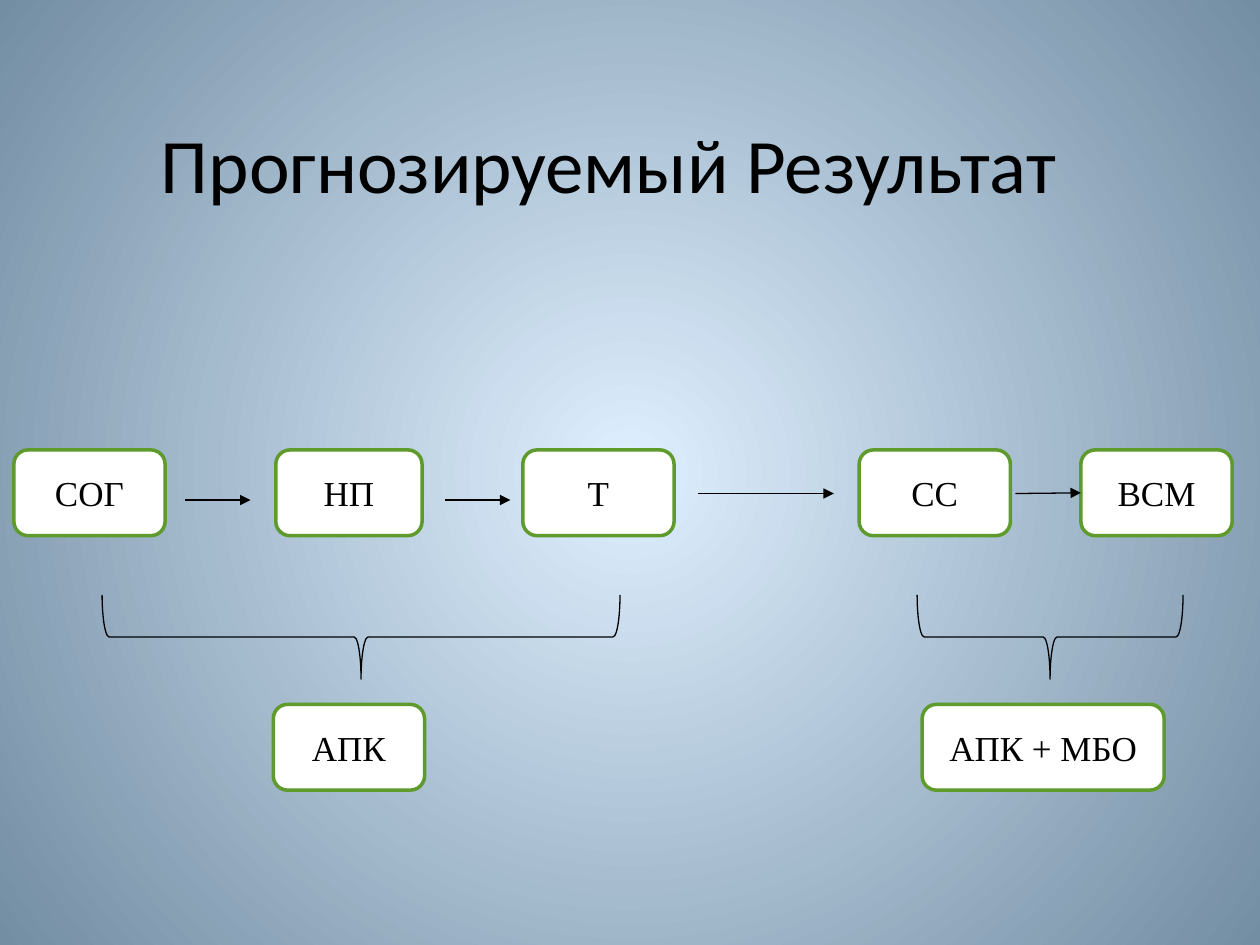
from lxml import etree
from pptx import Presentation
from pptx.dml.color import RGBColor
from pptx.enum.shapes import MSO_CONNECTOR, MSO_SHAPE
from pptx.enum.text import MSO_ANCHOR, PP_ALIGN
from pptx.oxml.ns import qn
from pptx.util import Cm, Pt

ROUND = MSO_SHAPE.ROUNDED_RECTANGLE
BRACE = MSO_SHAPE.LEFT_BRACE
LINE = MSO_CONNECTOR.STRAIGHT
MIDDLE = MSO_ANCHOR.MIDDLE
CENTER = PP_ALIGN.CENTER
LEFT_SIDE = 1

COLORS = {"center": "DFF0FF", "edge": "738DA3", "box": "FFFFFF",
          "border": "5E9B2C", "ink": "000000"}

STEP_TOP, GROUP_TOP, BRACE_MID = 9.07, 14.2, 12.84
BOX_W, BOX_H, BRACE_H = 3.05, 1.73, 1.7

# Label, left, width
STEPS = [("СОГ", 0.28, BOX_W), ("НП", 5.56, 2.95), ("Т", 10.54, BOX_W),
         ("СС", 17.32, BOX_W), ("ВСМ", 21.79, BOX_W)]
GROUPS = [("АПК", 5.51, BOX_W), ("АПК + МБО", 18.59, 4.88)]
# Start, end, height on the slide
ARROWS = [(3.73, 5.05, 10.08), (8.97, 10.29, 10.08),
          (14.07, 16.81, 9.95), (20.47, 21.79, 9.95)]
# Center, span
BRACES = [(7.28, 10.44), (21.17, 5.36)]


def rgb(name):
    return RGBColor.from_string(COLORS[name])


def set_text(shape, text, font, size):
    frame = shape.text_frame
    frame.text = text
    frame.vertical_anchor = MIDDLE
    par = frame.paragraphs[0]
    par.alignment = CENTER
    run = par.runs[0].font
    run.name, run.size = font, Pt(size)
    run.color.rgb = rgb("ink")


def set_line(shape, color, width):
    shape.line.color.rgb = rgb(color)
    shape.line.width = Pt(width)


def paint_back(slide):
    fill = slide.background.fill
    fill.gradient()
    for stop, name in zip(fill.gradient_stops, ("center", "edge")):
        stop.color.rgb = rgb(name)
    # Turn the linear gradient into a circular one
    grad = slide.element.find(".//" + qn("a:gradFill"))
    for lin in grad.findall(qn("a:lin")):
        grad.remove(lin)
    circle = etree.SubElement(grad, qn("a:path"), path="circle")
    etree.SubElement(circle, qn("a:fillToRect"),
                     {side: "50000" for side in "ltrb"})


def add_title(slide, text):
    title = slide.shapes.title
    title.left, title.top = Cm(1.47), Cm(1.47)
    title.width, title.height = Cm(21.62), Cm(3.63)
    set_text(title, text, "Calibri", 44)


def add_box(slide, text, left, top, width):
    box = slide.shapes.add_shape(ROUND, Cm(left), Cm(top), Cm(width), Cm(BOX_H))
    box.shadow.inherit = False
    box.fill.solid()
    box.fill.fore_color.rgb = rgb("box")
    set_line(box, "border", 2)
    set_text(box, text, "Times New Roman", 20)
    return box


def add_arrow(slide, start, end, y):
    arrow = slide.shapes.add_connector(LINE, Cm(start), Cm(y), Cm(end), Cm(y))
    set_line(arrow, "ink", 0.75)
    etree.SubElement(arrow.line._get_or_add_ln(), qn("a:tailEnd"), type="triangle")
    etree.SubElement(arrow.element.spPr, qn("a:effectLst"))
    return arrow


def add_brace(slide, mid, span):
    # Upright brace, turned to open upwards
    brace = slide.shapes.add_shape(BRACE, Cm(mid - BRACE_H / 2),
                                   Cm(BRACE_MID - span / 2), Cm(BRACE_H), Cm(span))
    brace.rotation = 270
    brace.shadow.inherit = False
    brace.fill.background()
    set_line(brace, "ink", 0.75)


def main():
    prs = Presentation()
    prs.slide_width, prs.slide_height = Cm(25.4), Cm(19.05)
    slide = prs.slides.add_slide(prs.slide_layouts[5])
    paint_back(slide)
    add_title(slide, "Прогнозируемый Результат")

    # Chain of steps
    steps = [add_box(slide, text, left, STEP_TOP, width)
             for text, left, width in STEPS]
    arrows = [add_arrow(slide, *spot) for spot in ARROWS]
    arrows[-1].end_connect(steps[-1], LEFT_SIDE)

    # Groups under the chain
    for mid, span in BRACES:
        add_brace(slide, mid, span)
    for text, left, width in GROUPS:
        add_box(slide, text, left, GROUP_TOP, width)

    prs.save("out.pptx")


if __name__ == "__main__":
    main()
